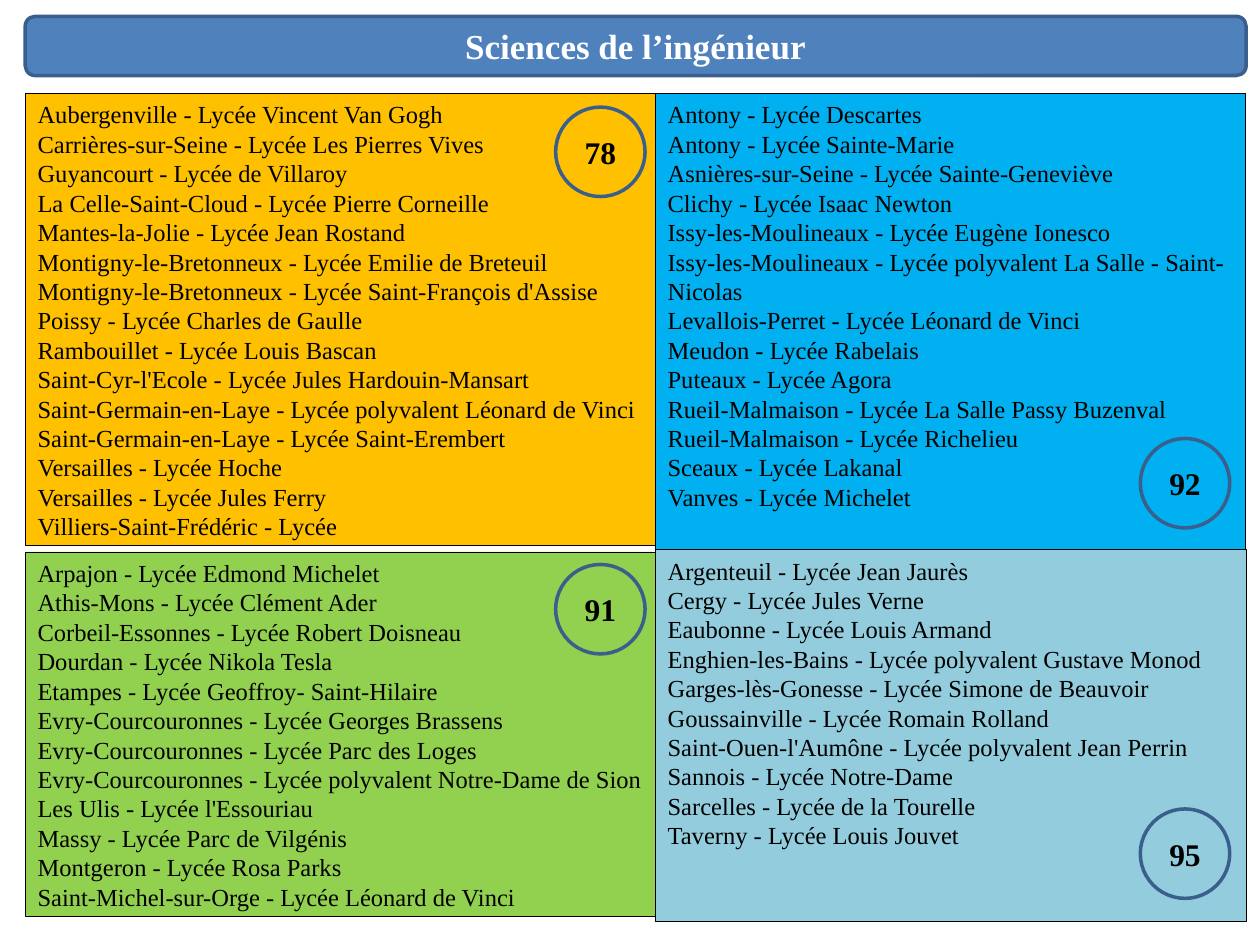
from dataclasses import dataclass

from pptx import Presentation
from pptx.dml.color import RGBColor
from pptx.enum.shapes import MSO_SHAPE
from pptx.enum.text import MSO_ANCHOR, PP_ALIGN
from pptx.shapes.autoshape import Shape
from pptx.slide import Slide
from pptx.util import Emu, Pt

EMU_PER_PX = 9144
FONT = "Times New Roman"
BLACK, WHITE = "000000", "FFFFFF"
TITLE_FILL, OUTLINE = "4F81BD", "3A5F8C"
BADGE_SIZE = 71
LEFT, MIDDLE = 20, 520


@dataclass(frozen=True)
class Box:
    left: int
    top: int
    width: int
    height: int


@dataclass(frozen=True)
class Department:
    number: str
    color: str
    box: Box
    badge_left: int
    badge_top: int
    schools: tuple[str, ...]


DEPARTMENTS = (
    Department("78", "FFC000", Box(LEFT, 74, 500, 359), 441, 85, (
        "Aubergenville - Lycée Vincent Van Gogh",
        "Carrières-sur-Seine - Lycée Les Pierres Vives",
        "Guyancourt - Lycée de Villaroy",
        "La Celle-Saint-Cloud - Lycée Pierre Corneille",
        "Mantes-la-Jolie - Lycée Jean Rostand",
        "Montigny-le-Bretonneux - Lycée Emilie de Breteuil",
        "Montigny-le-Bretonneux - Lycée Saint-François d'Assise",
        "Poissy - Lycée Charles de Gaulle",
        "Rambouillet - Lycée Louis Bascan",
        "Saint-Cyr-l'Ecole - Lycée Jules Hardouin-Mansart",
        "Saint-Germain-en-Laye - Lycée polyvalent Léonard de Vinci",
        "Saint-Germain-en-Laye - Lycée Saint-Erembert",
        "Versailles - Lycée Hoche",
        "Versailles - Lycée Jules Ferry",
        "Villiers-Saint-Frédéric - Lycée",
    )),
    Department("91", "92D050", Box(LEFT, 438, 500, 289), 441, 448, (
        "Arpajon - Lycée Edmond Michelet",
        "Athis-Mons - Lycée Clément Ader",
        "Corbeil-Essonnes - Lycée Robert Doisneau",
        "Dourdan - Lycée Nikola Tesla",
        "Etampes - Lycée Geoffroy- Saint-Hilaire",
        "Evry-Courcouronnes - Lycée Georges Brassens",
        "Evry-Courcouronnes - Lycée Parc des Loges",
        "Evry-Courcouronnes - Lycée polyvalent Notre-Dame de Sion",
        "Les Ulis - Lycée l'Essouriau",
        "Massy - Lycée Parc de Vilgénis",
        "Montgeron - Lycée Rosa Parks",
        "Saint-Michel-sur-Orge - Lycée Léonard de Vinci",
    )),
    Department("92", "00B0F0", Box(MIDDLE, 74, 468, 362), 905, 348, (
        "Antony - Lycée Descartes",
        "Antony - Lycée Sainte-Marie",
        "Asnières-sur-Seine - Lycée Sainte-Geneviève",
        "Clichy - Lycée Isaac Newton",
        "Issy-les-Moulineaux - Lycée Eugène Ionesco",
        "Issy-les-Moulineaux - Lycée polyvalent La Salle - Saint-Nicolas",
        "Levallois-Perret - Lycée Léonard de Vinci",
        "Meudon - Lycée Rabelais",
        "Puteaux - Lycée Agora",
        "Rueil-Malmaison - Lycée La Salle Passy Buzenval",
        "Rueil-Malmaison - Lycée Richelieu",
        "Sceaux - Lycée Lakanal",
        "Vanves - Lycée Michelet",
    )),
    Department("95", "93CDDD", Box(MIDDLE, 436, 469, 295), 905, 642, (
        "Argenteuil - Lycée Jean Jaurès",
        "Cergy - Lycée Jules Verne",
        "Eaubonne - Lycée Louis Armand",
        "Enghien-les-Bains - Lycée polyvalent Gustave Monod",
        "Garges-lès-Gonesse - Lycée Simone de Beauvoir",
        "Goussainville - Lycée Romain Rolland",
        "Saint-Ouen-l'Aumône - Lycée polyvalent Jean Perrin",
        "Sannois - Lycée Notre-Dame",
        "Sarcelles - Lycée de la Tourelle",
        "Taverny - Lycée Louis Jouvet",
    )),
)


def px(length: int) -> Emu:
    return Emu(length * EMU_PER_PX)


def rgb(color: str) -> RGBColor:
    return RGBColor.from_string(color)


def add_filled_shape(slide: Slide, kind: MSO_SHAPE, box: Box, fill: str,
                     line: str, line_width: float) -> Shape:
    shape = slide.shapes.add_shape(
        kind, px(box.left), px(box.top), px(box.width), px(box.height))
    shape.shadow.inherit = False
    shape.fill.solid()
    shape.fill.fore_color.rgb = rgb(fill)
    shape.line.color.rgb = rgb(line)
    shape.line.width = Pt(line_width)
    return shape


def write_lines(shape: Shape, lines: tuple[str, ...], size: int, color: str,
                bold: bool, alignment: PP_ALIGN, anchor: MSO_ANCHOR) -> None:
    frame = shape.text_frame
    frame.word_wrap = True
    frame.vertical_anchor = anchor
    frame.text = "\n".join(lines)
    for paragraph in frame.paragraphs:
        paragraph.alignment = alignment
        paragraph.font.name = FONT
        paragraph.font.size = Pt(size)
        paragraph.font.bold = bold
        paragraph.font.color.rgb = rgb(color)


def add_label(slide: Slide, kind: MSO_SHAPE, box: Box, fill: str,
              text: str, size: int, color: str) -> None:
    shape = add_filled_shape(slide, kind, box, fill, OUTLINE, 2)
    write_lines(shape, (text,), size, color, True, PP_ALIGN.CENTER, MSO_ANCHOR.MIDDLE)


def add_department(slide: Slide, department: Department) -> None:
    panel = add_filled_shape(
        slide, MSO_SHAPE.RECTANGLE, department.box, department.color, BLACK, 0.25)
    write_lines(panel, department.schools, 14, BLACK, False,
                PP_ALIGN.LEFT, MSO_ANCHOR.TOP)
    badge = Box(department.badge_left, department.badge_top, BADGE_SIZE, BADGE_SIZE)
    add_label(slide, MSO_SHAPE.OVAL, badge, department.color,
              department.number, 18, BLACK)


def main() -> None:
    presentation = Presentation()
    presentation.slide_width = px(1000)
    presentation.slide_height = px(750)
    slide = presentation.slides.add_slide(presentation.slide_layouts[6])
    add_label(slide, MSO_SHAPE.ROUNDED_RECTANGLE, Box(LEFT, 13, 969, 47),
              TITLE_FILL, "Sciences de l’ingénieur", 20, WHITE)
    for department in DEPARTMENTS:
        add_department(slide, department)
    presentation.save("out.pptx")


if __name__ == "__main__":
    main()
